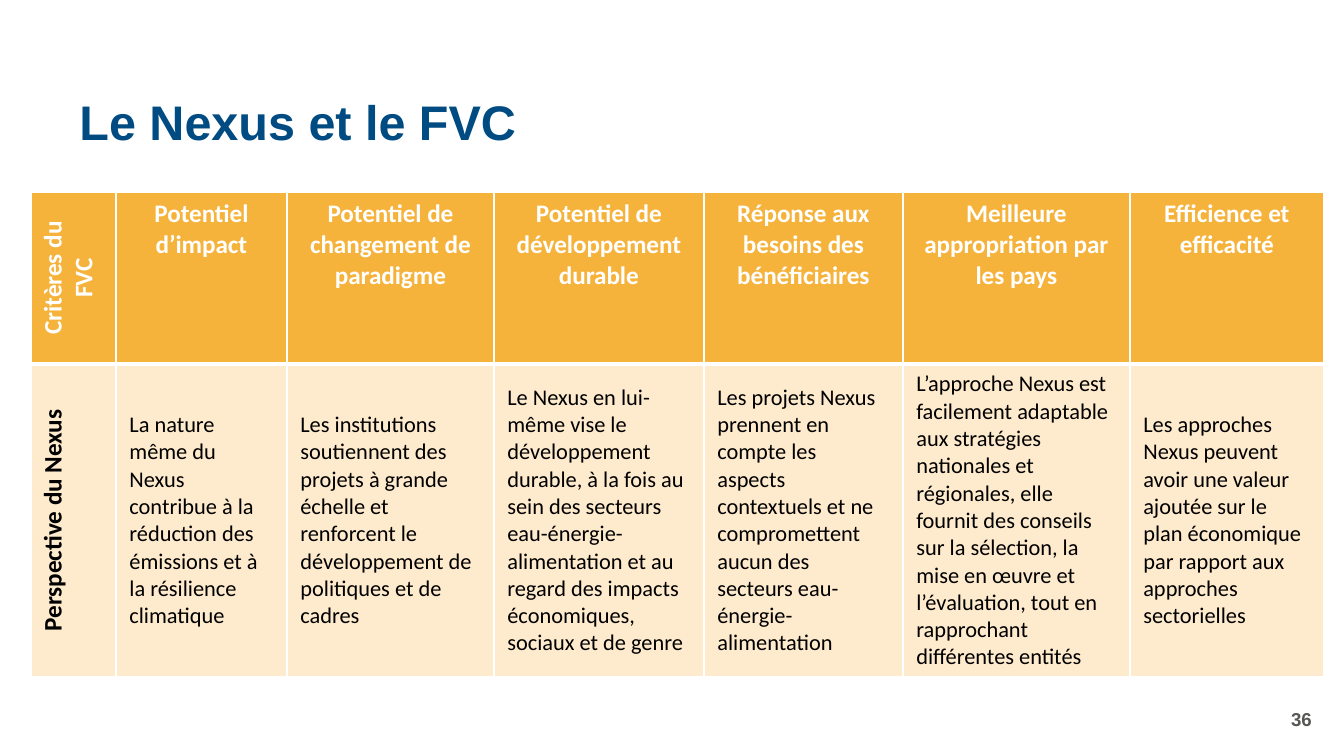
import pptx
import pptx.util
import pptx.dml.color
import pptx.enum.text
import pptx.oxml

PX = 6804  # EMU per px, 134.4 px to the inch
COLORS = {
    "title": "004C82",
    "number": "575756",
    "header": "F6B33C",
    "body": "FEEACC",
    "white": "FFFFFF",
    "black": "000000",
}
ALIGN = pptx.enum.text.PP_ALIGN
MIDDLE = pptx.enum.text.MSO_ANCHOR.MIDDLE
TOP = pptx.enum.text.MSO_ANCHOR.TOP


def write(text_frame, text, font_name, size, color, bold, alignment):
    text_frame.text = text
    paragraph = text_frame.paragraphs[0]
    paragraph.alignment = alignment
    font = paragraph.runs[0].font
    font.name = font_name
    font.size = pptx.util.Pt(size)
    font.bold = bold
    font.color.rgb = pptx.dml.color.RGBColor.from_string(COLORS[color])


def add_borders(cell, widths):
    """Put white lines, widths in points by side, ahead of the cell's fill."""
    properties = cell._tc.get_or_add_tcPr()
    for position, side in enumerate("LRTB"):
        line = pptx.oxml.parse_xml(
            '<a:ln%s xmlns:a="http://schemas.openxmlformats.org/drawingml/2006/main" w="%d">'
            '<a:solidFill><a:srgbClr val="%s"/></a:solidFill></a:ln%s>'
            % (side, pptx.util.Pt(widths[side]), COLORS["white"], side)
        )
        properties.insert(position, line)


presentation = pptx.Presentation()
presentation.slide_width = 1344 * PX
presentation.slide_height = 756 * PX
slide = presentation.slides.add_slide(presentation.slide_layouts[5])

# Title
title = slide.shapes.title
title.left, title.top, title.width, title.height = 66 * PX, 85 * PX, 1259 * PX, 79 * PX
write(title.text_frame, "Le Nexus et le FVC", "Arial", 26, "title", True, ALIGN.LEFT)
title.text_frame.vertical_anchor = MIDDLE
title.text_frame.paragraphs[0].line_spacing = 0.9

# Slide number
number = slide.shapes.add_textbox(1023 * PX, 699 * PX, 302 * PX, 40 * PX)
number.text_frame.word_wrap = True
number.text_frame.vertical_anchor = MIDDLE
write(number.text_frame, "36", "Arial", 10, "number", True, ALIGN.RIGHT)

# Criteria table: one pair of header and perspective per column
columns = [
    (85, "Critères du FVC", "Perspective du Nexus"),
    (171, "Potentiel d’impact",
     "La nature même du Nexus contribue à la réduction des émissions et à la "
     "résilience climatique"),
    (207, "Potentiel de changement de paradigme",
     "Les institutions soutiennent des projets à grande échelle et renforcent le "
     "développement de politiques et de cadres"),
    (210, "Potentiel de développement durable",
     "Le Nexus en lui-même vise le développement durable, à la fois au sein des "
     "secteurs eau-énergie-alimentation et au regard des impacts économiques, "
     "sociaux et de genre"),
    (199, "Réponse aux besoins des bénéficiaires",
     "Les projets Nexus prennent en compte les aspects contextuels et ne "
     "compromettent aucun des secteurs eau-énergie-alimentation"),
    (227, "Meilleure appropriation par les pays",
     "L’approche Nexus est facilement adaptable aux stratégies nationales et "
     "régionales, elle fournit des conseils sur la sélection, la mise en œuvre et "
     "l’évaluation, tout en rapprochant différentes entités"),
    (194, "Efficience et efficacité",
     "Les approches Nexus peuvent avoir une valeur ajoutée sur le plan économique "
     "par rapport aux approches sectorielles"),
]
row_heights = [172, 313]
table_width = sum(width for width, _, _ in columns)
table = slide.shapes.add_table(
    len(row_heights), len(columns), 31 * PX, 192 * PX,
    table_width * PX, sum(row_heights) * PX,
).table
for row, height in zip(table.rows, row_heights):
    row.height = height * PX

for index, (width, criterion, perspective) in enumerate(columns):
    table.columns[index].width = width * PX
    is_label = index == 0
    header, body = table.cell(0, index), table.cell(1, index)
    write(header.text_frame, criterion, "Calibri", 13.5, "white", True, ALIGN.CENTER)
    write(body.text_frame, perspective, "Calibri", 13.5 if is_label else 12, "black",
          is_label, ALIGN.CENTER if is_label else ALIGN.LEFT)
    header.vertical_anchor = MIDDLE if is_label else TOP
    body.vertical_anchor = MIDDLE
    for cell, fill in ((header, "header"), (body, "body")):
        cell.fill.solid()
        cell.fill.fore_color.rgb = pptx.dml.color.RGBColor.from_string(COLORS[fill])
        if is_label:
            cell._tc.get_or_add_tcPr().set("vert", "vert270")
    add_borders(header, {"L": 1, "R": 1, "T": 1, "B": 3})
    add_borders(body, {"L": 1, "R": 1, "T": 3, "B": 1})

presentation.save("out.pptx")
